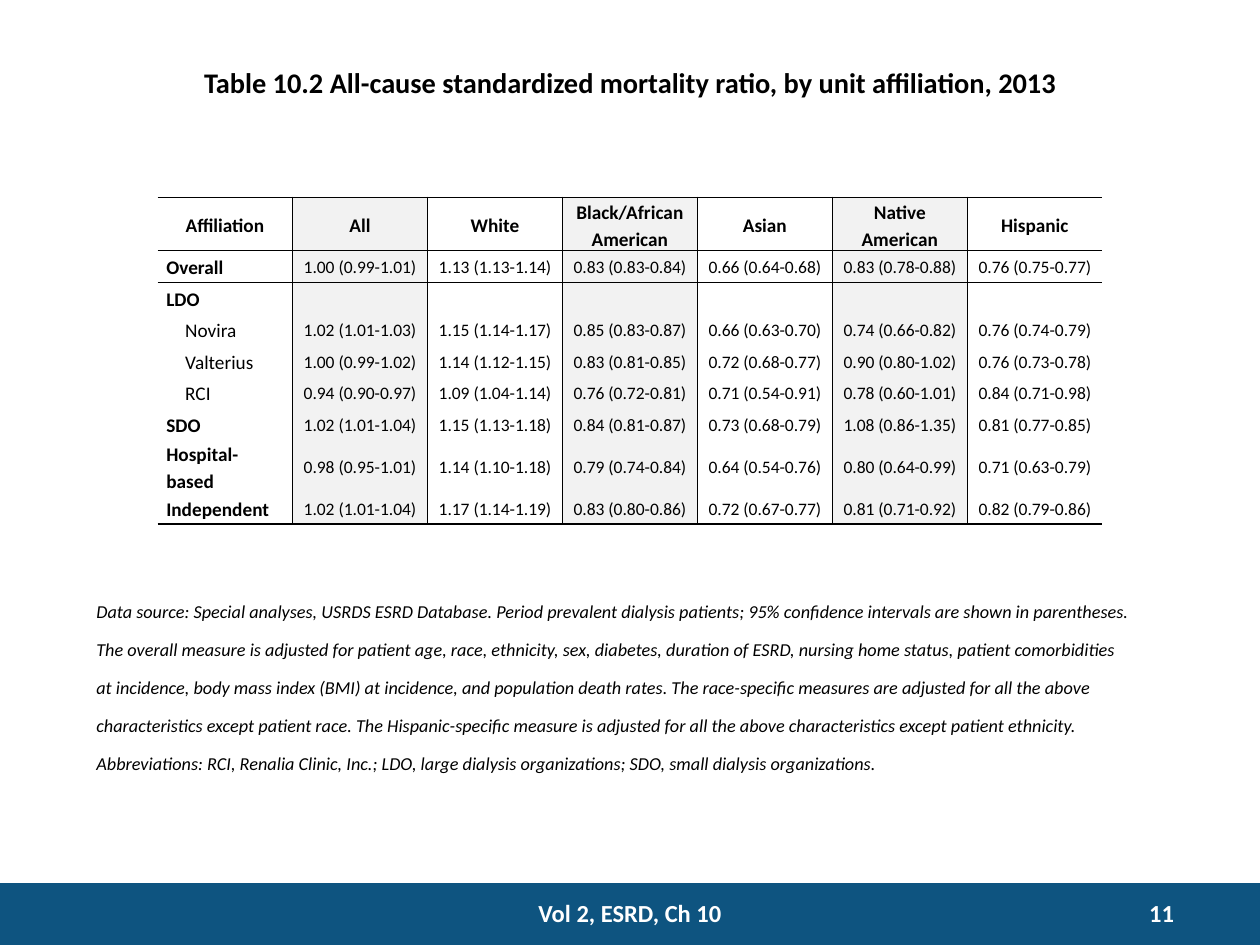
from collections import namedtuple

from lxml.etree import SubElement
from pptx import Presentation
from pptx.dml.color import RGBColor
from pptx.enum.shapes import MSO_SHAPE
from pptx.enum.text import MSO_ANCHOR, MSO_AUTO_SIZE, PP_ALIGN
from pptx.oxml.ns import qn
from pptx.util import Inches, Pt

COLORS = {"ink": "000000", "paper": "FFFFFF", "band": "F2F2F2", "footer": "0E5480"}
FONT = "Calibri"
UNIT = Inches(10) / 120
PLAIN_TABLE_STYLE = "{2D5ABB26-0587-4C30-8999-92F81FD0307C}"
Box = namedtuple("Box", "left top width height")

TITLE = "Table 10.2 All-cause standardized mortality ratio, by unit affiliation, 2013"
NOTE = (
    "Data source: Special analyses, USRDS ESRD Database. Period prevalent dialysis patients; "
    "95% confidence intervals are shown in parentheses. The overall measure is adjusted for "
    "patient age, race, ethnicity, sex, diabetes, duration of ESRD, nursing home status, patient "
    "comorbidities at incidence, body mass index (BMI) at incidence, and population death rates. "
    "The race-specific measures are adjusted for all the above characteristics except patient "
    "race. The Hispanic-specific measure is adjusted for all the above characteristics except "
    "patient ethnicity. Abbreviations: RCI, Renalia Clinic, Inc.; LDO, large dialysis "
    "organizations; SDO, small dialysis organizations."
)
HEADER = ["Affiliation", "All", "White", "Black/African American", "Asian", "Native American", "Hispanic"]
ROWS = [
    ["Overall", "1.00 (0.99-1.01)", "1.13 (1.13-1.14)", "0.83 (0.83-0.84)",
     "0.66 (0.64-0.68)", "0.83 (0.78-0.88)", "0.76 (0.75-0.77)"],
    ["LDO", "", "", "", "", "", ""],
    ["Novira", "1.02 (1.01-1.03)", "1.15 (1.14-1.17)", "0.85 (0.83-0.87)",
     "0.66 (0.63-0.70)", "0.74 (0.66-0.82)", "0.76 (0.74-0.79)"],
    ["Valterius", "1.00 (0.99-1.02)", "1.14 (1.12-1.15)", "0.83 (0.81-0.85)",
     "0.72 (0.68-0.77)", "0.90 (0.80-1.02)", "0.76 (0.73-0.78)"],
    ["RCI", "0.94 (0.90-0.97)", "1.09 (1.04-1.14)", "0.76 (0.72-0.81)",
     "0.71 (0.54-0.91)", "0.78 (0.60-1.01)", "0.84 (0.71-0.98)"],
    ["SDO", "1.02 (1.01-1.04)", "1.15 (1.13-1.18)", "0.84 (0.81-0.87)",
     "0.73 (0.68-0.79)", "1.08 (0.86-1.35)", "0.81 (0.77-0.85)"],
    ["Hospital-based", "0.98 (0.95-1.01)", "1.14 (1.10-1.18)", "0.79 (0.74-0.84)",
     "0.64 (0.54-0.76)", "0.80 (0.64-0.99)", "0.71 (0.63-0.79)"],
    ["Independent", "1.02 (1.01-1.04)", "1.17 (1.14-1.19)", "0.83 (0.80-0.86)",
     "0.72 (0.67-0.77)", "0.81 (0.71-0.92)", "0.82 (0.79-0.86)"],
]
LDO_MEMBERS = {"Novira", "Valterius", "RCI"}


def color(name):
    return RGBColor.from_string(COLORS[name])


def lengths(box):
    return [round(units * UNIT) for units in box]


def write(frame, text, *, size, ink="ink", bold=False, italic=False, align=PP_ALIGN.LEFT,
          spacing=None, indent=0, raised=False):
    paragraph = frame.paragraphs[0]
    paragraph.alignment = align
    paragraph.line_spacing = spacing
    if indent:
        paragraph._p.get_or_add_pPr().set("indent", str(Inches(indent)))
    if not text:
        paragraph._p.get_or_add_endParaRPr().set("sz", str(size * 100))
        return
    run = paragraph.add_run()
    run.text = text
    run.font.name = FONT
    run.font.size = Pt(size)
    run.font.bold = bold
    run.font.italic = italic
    run.font.color.rgb = color(ink)
    if raised:
        run._r.get_or_add_rPr().set("baseline", "30000")


def add_text(slide, box, text, *, grow=False, **text_format):
    frame = slide.shapes.add_textbox(*lengths(box)).text_frame
    frame.word_wrap = True
    if grow:
        frame.auto_size = MSO_AUTO_SIZE.SHAPE_TO_FIT_TEXT
    write(frame, text, **text_format)


def place_title(slide, box):
    title = slide.shapes.title
    title.left, title.top, title.width, title.height = lengths(box)
    frame = title.text_frame
    frame.word_wrap = True
    frame.vertical_anchor = MSO_ANCHOR.TOP
    frame.auto_size = MSO_AUTO_SIZE.SHAPE_TO_FIT_TEXT
    write(frame, TITLE, size=28, bold=True, align=PP_ALIGN.CENTER, raised=True)


def draw_borders(cell, widths):
    properties = cell._tc.get_or_add_tcPr()
    for position, (side, width) in enumerate(widths.items()):
        line = properties.makeelement(qn(f"a:ln{side}"), {"w": str(Pt(width))})
        fill = SubElement(line, qn("a:solidFill"))
        SubElement(fill, qn("a:srgbClr"), val=COLORS["ink"])
        properties.insert(position, line)


def border_widths(row, column, last_row, last_column):
    widths = {}
    if column > 0:
        widths["L"] = 0.5
    if column < last_column:
        widths["R"] = 0.5
    if row <= 1:
        widths["T"] = 1 if row == 0 else 0.5
    if row in (0, last_row):
        widths["B"] = 1 if row == last_row else 0.5
    return widths


def fill_cell(cell, text, row, column):
    is_label = row == 0 or column == 0
    is_member = text in LDO_MEMBERS
    cell.vertical_anchor = MSO_ANCHOR.MIDDLE
    cell.margin_left = cell.margin_right = Inches(0.07 if is_label else 0)
    cell.margin_top = cell.margin_bottom = 0
    write(cell.text_frame, text, size=11 if is_label else 10, bold=is_label and not is_member,
          align=PP_ALIGN.LEFT if row and not column else PP_ALIGN.CENTER,
          spacing=1.15, indent=0.15 if is_member else 0)
    if column % 2:
        cell.fill.solid()
        cell.fill.fore_color.rgb = color("band")
    else:
        cell.fill.background()


def place_table(slide, box):
    content = [HEADER, *ROWS]
    frame = slide.shapes.add_table(len(content), len(HEADER), *lengths(box))
    table = frame.table
    table.first_row = table.horz_banding = False
    table._tbl.tblPr.find(qn("a:tableStyleId")).text = PLAIN_TABLE_STYLE
    for column in table.columns:
        column.width = round(box.width * UNIT / len(HEADER))
    for number, row in enumerate(table.rows):
        row.height = Inches(0.25 if number else 0.21)
    for row, texts in enumerate(content):
        for column, text in enumerate(texts):
            cell = table.cell(row, column)
            fill_cell(cell, text, row, column)
            draw_borders(cell, border_widths(row, column, len(ROWS), len(HEADER) - 1))


def place_footer(slide, box):
    bar = slide.shapes.add_shape(MSO_SHAPE.RECTANGLE, *lengths(box))
    bar.shadow.inherit = False
    bar.fill.solid()
    bar.fill.fore_color.rgb = color("footer")
    bar.line.fill.background()
    text_top = box.top + 0.85
    add_text(slide, Box(box.left + 47, text_top, 26, 4), "Vol 2, ESRD, Ch 10",
             size=14, ink="paper", bold=True, align=PP_ALIGN.CENTER)
    add_text(slide, Box(box.left + 101, text_top, 12, 3.6), "11",
             size=14, ink="paper", bold=True, align=PP_ALIGN.RIGHT)


def main():
    presentation = Presentation()
    presentation.slide_width = Inches(10)
    presentation.slide_height = Inches(7.5)
    slide = presentation.slides.add_slide(presentation.slide_layouts[5])
    slide.background.fill.solid()
    slide.background.fill.fore_color.rgb = color("paper")
    place_footer(slide, Box(0, 84.1, 120, 5.9))
    add_text(slide, Box(8, 56.25, 101, 15.75), NOTE, size=18, italic=True, raised=True, grow=True)
    place_title(slide, Box(0, 5, 120, 5))
    place_table(slide, Box(15, 18.8, 90, 31))
    presentation.save("out.pptx")


if __name__ == "__main__":
    main()
